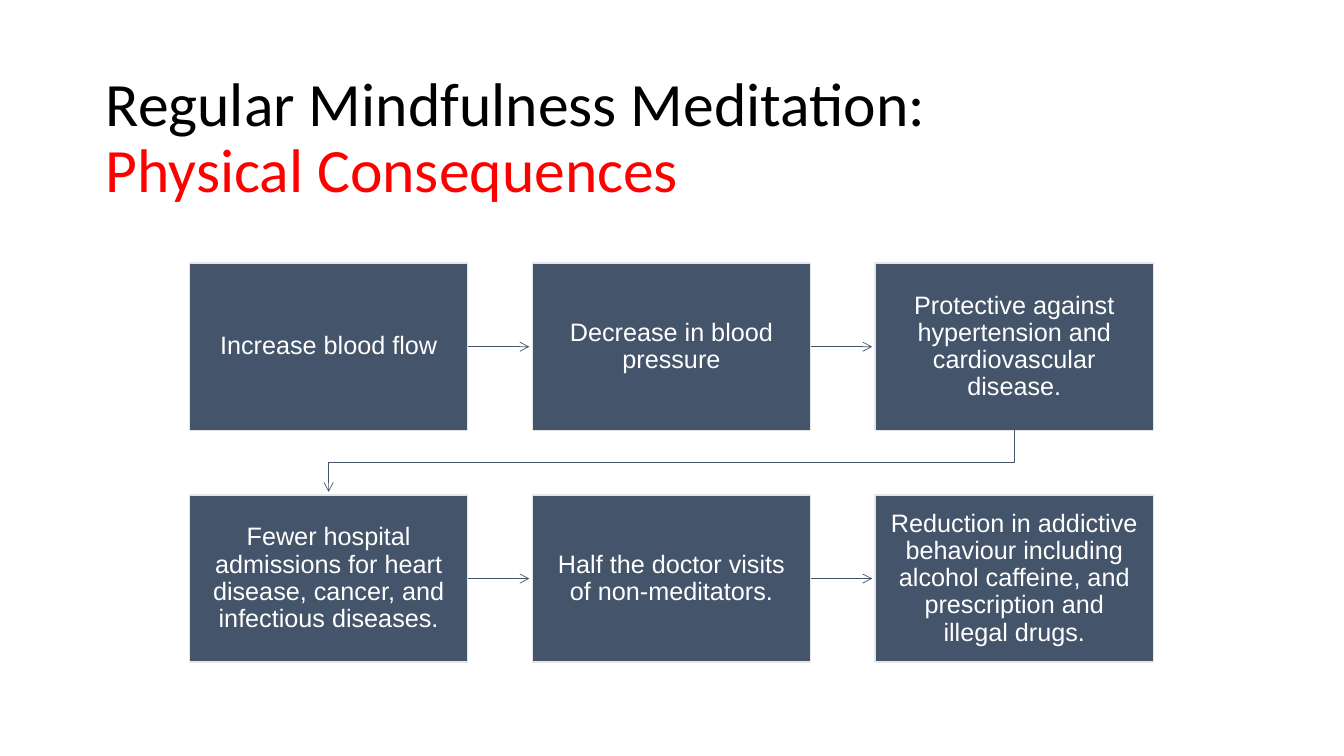
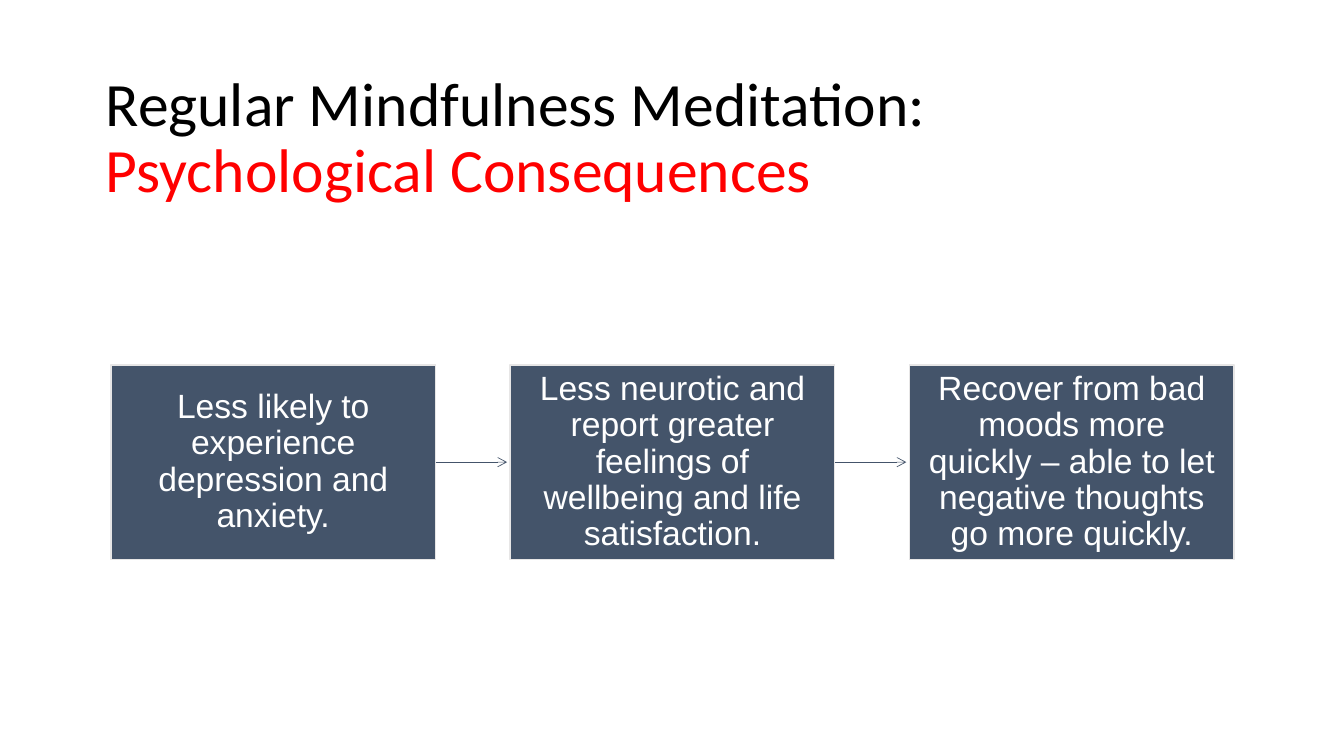
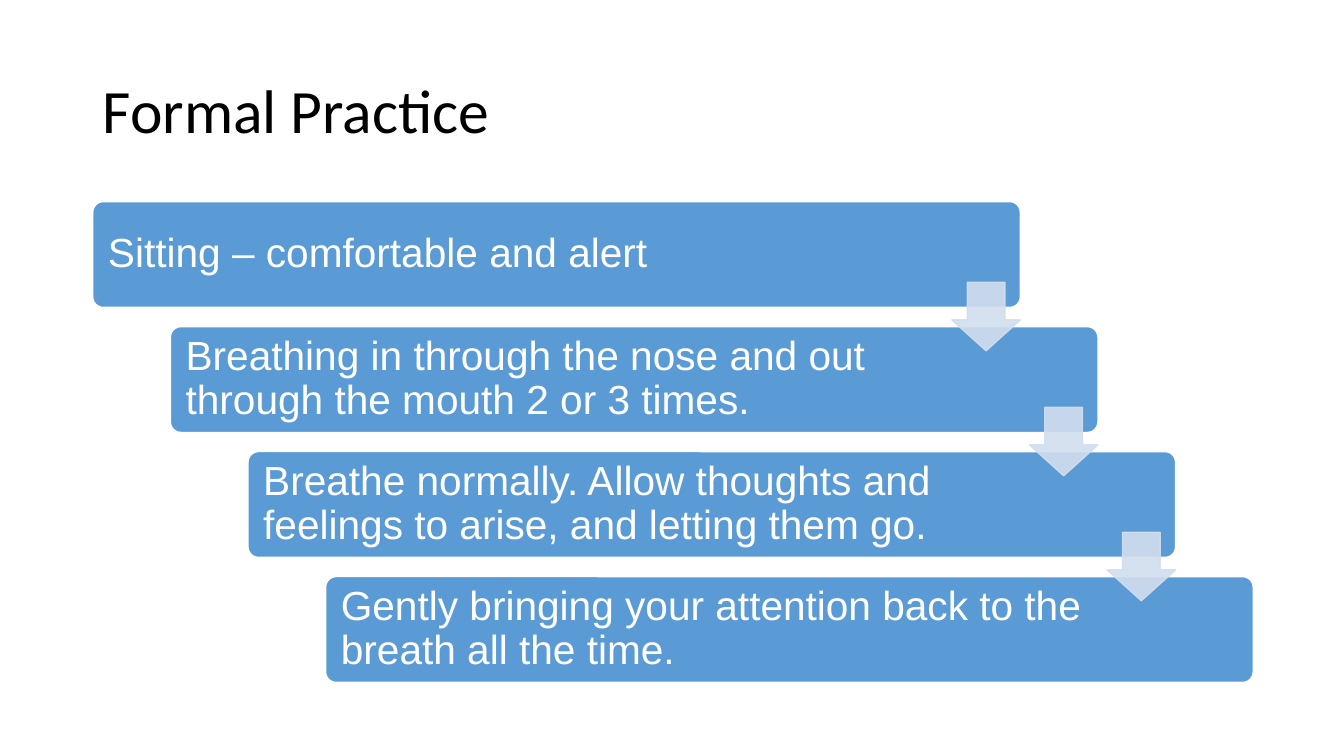
import pptx
import pptx.util
import pptx.dml.color
import pptx.enum.shapes
import pptx.enum.text
import pptx.oxml
import pptx.oxml.ns

Inches = pptx.util.Inches
Pt = pptx.util.Pt
SHAPE = pptx.enum.shapes.MSO_SHAPE
ALIGN = pptx.enum.text.PP_ALIGN
MIDDLE = pptx.enum.text.MSO_ANCHOR.MIDDLE

COLORS = {
    "ink": "000000", "accent": "FF0000", "white": "FFFFFF", "slate": "44546A",
    "edge": "E7E6E6", "blue": "5B9BD5", "pale": "D2DEEF",
}

# Content
FLOWS = [
    {
        "title": "Regular Mindfulness Meditation:\vPhysical Consequences",
        "left": 1.88, "top": 2.61, "width": 2.76, "height": 1.66,
        "gap": 0.64, "size": 18, "inset": 0.14,
        "boxes": [
            "Increase blood flow",
            "Decrease in blood pressure",
            "Protective against hypertension and cardiovascular disease.",
            "Fewer hospital admissions for heart disease, cancer, and infectious diseases.",
            "Half the doctor visits of non-meditators.",
            "Reduction in addictive behaviour including alcohol caffeine, and "
            "prescription and illegal drugs.",
        ],
    },
    {
        "title": "Regular Mindfulness Meditation:\vPsychological Consequences",
        "left": 1.1, "top": 3.62, "width": 3.22, "height": 1.93,
        "gap": 0.74, "size": 24, "inset": 0.16,
        "boxes": [
            "Less likely to experience depression and anxiety.",
            "Less neurotic and report greater feelings of wellbeing and life satisfaction.",
            "Recover from bad moods more quickly – able to let negative thoughts go more quickly.",
        ],
    },
]
STEPS = [
    "Sitting – comfortable and alert",
    "Breathing in through the nose and out through the mouth 2 or 3 times.",
    "Breathe normally. Allow thoughts and feelings to arise, and letting them go.",
    "Gently bringing your attention back to the breath all the time.",
]
COLS = 3
TIP = 0.03  # space between an arrow tip and the next box


# Shared helpers
def color(name):
    return pptx.dml.color.RGBColor.from_string(COLORS[name])


def write(shape, text, size, font, ink, align, insets):
    frame = shape.text_frame
    frame.word_wrap = True
    frame.vertical_anchor = MIDDLE
    frame.margin_left, frame.margin_top, frame.margin_right, frame.margin_bottom = map(
        Inches, insets)
    frame.text = text
    para = frame.paragraphs[0]
    para.alignment = align
    para.line_spacing = 0.9
    for run in para.runs:
        run.font.size = Pt(size)
        run.font.name = font
        run.font.color.rgb = color(ink)
    return para


def add_title(slide, text, left, top, width):
    box = slide.shapes.add_textbox(*map(Inches, (left, top, width, 1.45)))
    para = write(box, text, 44, "Calibri", "ink", ALIGN.LEFT, (0.1, 0.05, 0.1, 0.05))
    for run in para.runs[1:]:
        run.font.color.rgb = color("accent")


def add_block(slide, kind, place, fill, edge):
    block = slide.shapes.add_shape(kind, *map(Inches, place))
    block.shadow.inherit = False
    block.fill.solid()
    block.fill.fore_color.rgb = color(fill)
    block.line.color.rgb = color(edge)
    block.line.width = Pt(1)
    return block


def add_child(parent, tag, **attrs):
    child = pptx.oxml.parse_xml(f"<a:{tag} {pptx.oxml.ns.nsdecls('a')}/>")
    for key, value in attrs.items():
        child.set(key, value)
    parent.append(child)


def style_arrow(arrow):
    arrow.line.color.rgb = color("slate")
    arrow.line.width = Pt(0.5)
    add_child(arrow.line._get_or_add_ln(), "tailEnd", type="arrow")


def add_arrow(slide, box, start, end):
    arrow = slide.shapes.add_connector(
        pptx.enum.shapes.MSO_CONNECTOR.STRAIGHT, *map(Inches, start + end))
    arrow.begin_connect(box, 3)
    style_arrow(arrow)
    add_child(arrow._element.spPr, "effectLst")


def add_turn(slide, points):
    spots = [(Inches(x), Inches(y)) for x, y in points]
    path = slide.shapes.build_freeform(*spots[0])
    path.add_line_segments(spots[1:], close=False)
    turn = path.convert_to_shape()
    turn.shadow.inherit = False
    turn.fill.background()
    style_arrow(turn)


# Boxes in rows, each leading to the next
def build_flow(slide, flow):
    add_title(slide, flow["title"], 0.95, 0.66, 11.43)
    wide, high, gap = flow["width"], flow["height"], flow["gap"]
    last = len(flow["boxes"]) - 1
    for i, text in enumerate(flow["boxes"]):
        row, col = divmod(i, COLS)
        x = flow["left"] + col * (wide + gap)
        y = flow["top"] + row * (high + gap)
        box = add_block(slide, SHAPE.RECTANGLE, (x, y, wide, high), "slate", "edge")
        write(box, text, flow["size"], "Arial", "white", ALIGN.CENTER, [flow["inset"]] * 4)
        if i == last:
            continue
        if col < COLS - 1:
            mid = y + high / 2
            add_arrow(slide, box, (x + wide, mid), (x + wide + gap - TIP, mid))
        else:
            start, end = x + wide / 2, flow["left"] + wide / 2
            base = y + high
            add_turn(slide, [(start, base), (start, base + gap / 2),
                             (end, base + gap / 2), (end, base + gap - TIP)])


# Staircase of steps with arrows over the joints
def build_steps(slide):
    add_title(slide, "Formal Practice", 0.92, 0.4, 11.5)
    left, top, wide, high = 0.92, 2, 9.2, 1.05
    shift, drop, side = 0.77, 1.24, 0.68
    for i, text in enumerate(STEPS):
        bar = add_block(slide, SHAPE.ROUNDED_RECTANGLE,
                        (left + i * shift, top + i * drop, wide, high), "blue", "white")
        bar.adjustments[0] = 0.1
        write(bar, text, 29, "Arial", "white", ALIGN.LEFT, (0.12, 0.12, 1.57, 0.12))
    for i in range(len(STEPS) - 1):
        place = (left + wide - side + i * shift, top + 0.8 + i * drop, side, side)
        arrow = add_block(slide, SHAPE.DOWN_ARROW, place, "pale", "pale")
        arrow.adjustments[0] = 0.55
        arrow.adjustments[1] = 0.45
        for tint in arrow._element.spPr.iter(pptx.oxml.ns.qn("a:srgbClr")):
            add_child(tint, "alpha", val="90000")


def main():
    deck = pptx.Presentation()
    deck.slide_width, deck.slide_height = Inches(13.33), Inches(7.5)
    blank = deck.slide_layouts[6]
    for flow in FLOWS:
        build_flow(deck.slides.add_slide(blank), flow)
    build_steps(deck.slides.add_slide(blank))
    deck.save("out.pptx")


if __name__ == "__main__":
    main()
